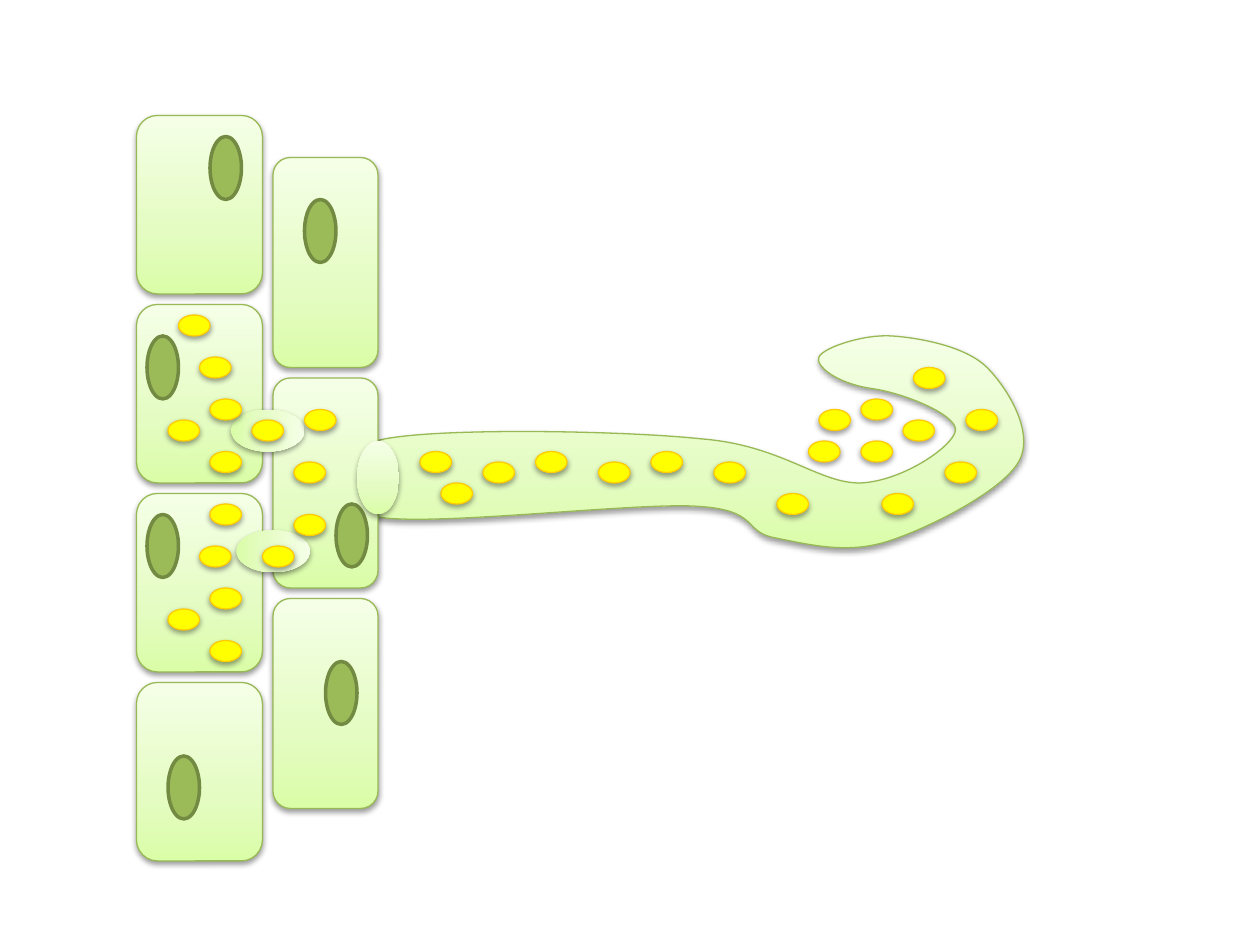
import dataclasses

import pptx
import pptx.dml.color
import pptx.enum.shapes
import pptx.oxml
import pptx.oxml.ns
import pptx.util

PX = 7620
SHAPE = pptx.enum.shapes.MSO_SHAPE


@dataclasses.dataclass(frozen=True)
class Theme:
    cell_stops: tuple = ((0, "DAFDA7"), (35, "E4FCC2"), (100, "F5FFE7"))
    cell_line: str = "98B955"
    nucleus: str = "9BBB59"
    nucleus_line: str = "738A42"
    grain: str = "FFFF00"
    grain_line: str = "FFCC00"
    shadow: str = "000000"
    thin: float = 0.75
    thick: float = 2


THEME = Theme()

OUTER_CELLS = [(130, 110 + 180 * i, 120, 170) for i in range(4)]
INNER_CELLS = [(260, 150 + 210 * i, 100, 200) for i in range(3)]
NUCLEI = [(320, 480), (290, 190), (160, 720), (140, 490), (140, 320),
          (200, 130), (310, 630)]
PLUG = (340, 420)
BRIDGES = [(240, 490), (235, 375)]

TUBE_START = (362, 419)
TUBE_CURVES = [
    ((414, 407), (593, 410), (668, 418)),
    ((745, 424), (780, 461), (820, 460)),
    ((860, 458), (908, 425), (910, 410)),
    ((912, 395), (860, 374), (830, 370)),
    ((796, 365), (776, 348), (780, 340)),
    ((784, 331), (823, 318), (850, 320)),
    ((877, 322), (920, 330), (940, 350)),
    ((960, 370), (986, 413), (970, 440)),
    ((954, 468), (883, 504), (844, 516)),
    ((805, 528), (768, 518), (737, 512)),
    ((707, 506), (724, 485), (661, 482)),
    ((598, 479), (408, 502), (358, 492)),
    ((308, 481), (310, 432), TUBE_START),
]

TUBE_GRAINS = [
    (840, 470), (680, 440), (570, 440), (740, 470), (900, 440), (460, 440),
    (870, 350), (920, 390), (420, 460), (400, 430), (510, 430), (620, 430),
]
RELEASED_GRAINS = [(820, 380), (780, 390), (770, 420), (820, 420), (860, 400)]
CELL_GRAINS = [
    (170, 300), (190, 340), (160, 400), (200, 380), (200, 430),
    (200, 480), (250, 520), (240, 400), (190, 520), (160, 580),
    (200, 560), (200, 610), (280, 490), (280, 440), (290, 390),
]


def rgb(color):
    return pptx.dml.color.RGBColor.from_string(color)


def add_shape(shapes, kind, x, y, w, h):
    return shapes.add_shape(kind, x * PX, y * PX, w * PX, h * PX)


def set_line(sp, color, width):
    sp.line.color.rgb = rgb(color)
    sp.line.width = pptx.util.Pt(width)


def set_shadow(sp):
    sp.shadow.inherit = False
    effects = sp._element.spPr.find(pptx.oxml.ns.qn("a:effectLst"))
    effects.append(pptx.oxml.parse_xml(
        f'<a:outerShdw {pptx.oxml.ns.nsdecls("a")} blurRad="40000" dist="20000" '
        f'dir="5400000" rotWithShape="0"><a:srgbClr val="{THEME.shadow}">'
        '<a:alpha val="38000"/></a:srgbClr></a:outerShdw>'))


def set_cell_style(sp, outlined=True):
    sp.fill.gradient()
    sp.fill.gradient_angle = 90
    stops = sp._element.spPr.find(".//" + pptx.oxml.ns.qn("a:gsLst"))
    for stop in list(stops):
        stops.remove(stop)
    for position, color in THEME.cell_stops:
        stops.append(pptx.oxml.parse_xml(
            f'<a:gs {pptx.oxml.ns.nsdecls("a")} pos="{position * 1000}">'
            f'<a:srgbClr val="{color}"/></a:gs>'))
    if outlined:
        set_line(sp, THEME.cell_line, THEME.thin)
    else:
        sp.line.fill.background()
    set_shadow(sp)


def curve_segments(sp):
    segments = list(sp._element.spPr.iter(pptx.oxml.ns.qn("a:lnTo")))
    for i in range(0, len(segments), 3):
        curve = pptx.oxml.parse_xml(
            f'<a:cubicBezTo {pptx.oxml.ns.nsdecls("a")}/>')
        segments[i].addprevious(curve)
        for segment in segments[i:i + 3]:
            curve.append(segment[0])
            segment.getparent().remove(segment)


def add_tube(shapes):
    builder = shapes.build_freeform(*TUBE_START, scale=PX)
    points = [point for curve in TUBE_CURVES for point in curve]
    builder.add_line_segments(points, close=True)
    sp = builder.convert_to_shape()
    curve_segments(sp)
    set_cell_style(sp)


def add_cell(shapes, x, y, w, h):
    set_cell_style(add_shape(shapes, SHAPE.ROUNDED_RECTANGLE, x, y, w, h))


def add_nucleus(shapes, x, y):
    sp = add_shape(shapes, SHAPE.OVAL, x, y, 30, 60)
    sp.fill.solid()
    sp.fill.fore_color.rgb = rgb(THEME.nucleus)
    set_line(sp, THEME.nucleus_line, THEME.thick)
    sp.shadow.inherit = False


def add_opening(shapes, x, y, rotation=0):
    sp = add_shape(shapes, SHAPE.OVAL, x, y, 40, 70)
    sp.rotation = rotation
    set_cell_style(sp, outlined=False)


def add_grain(shapes, x, y):
    sp = add_shape(shapes, SHAPE.OVAL, x, y, 30, 20)
    sp.fill.solid()
    sp.fill.fore_color.rgb = rgb(THEME.grain)
    set_line(sp, THEME.grain_line, THEME.thin)
    set_shadow(sp)


def main():
    prs = pptx.Presentation()
    prs.slide_width = 1200 * PX
    prs.slide_height = 900 * PX
    s = prs.slides.add_slide(prs.slide_layouts[6])

    add_tube(s.shapes)
    tissue = s.shapes.add_group_shape().shapes
    for cell in OUTER_CELLS + INNER_CELLS:
        add_cell(tissue, *cell)
    for nucleus in NUCLEI:
        add_nucleus(tissue, *nucleus)
    add_opening(tissue, *PLUG)
    for bridge in BRIDGES:
        add_opening(s.shapes, *bridge, rotation=90)
    for grain in TUBE_GRAINS + RELEASED_GRAINS + CELL_GRAINS:
        add_grain(s.shapes, *grain)

    prs.save("out.pptx")


if __name__ == "__main__":
    main()
